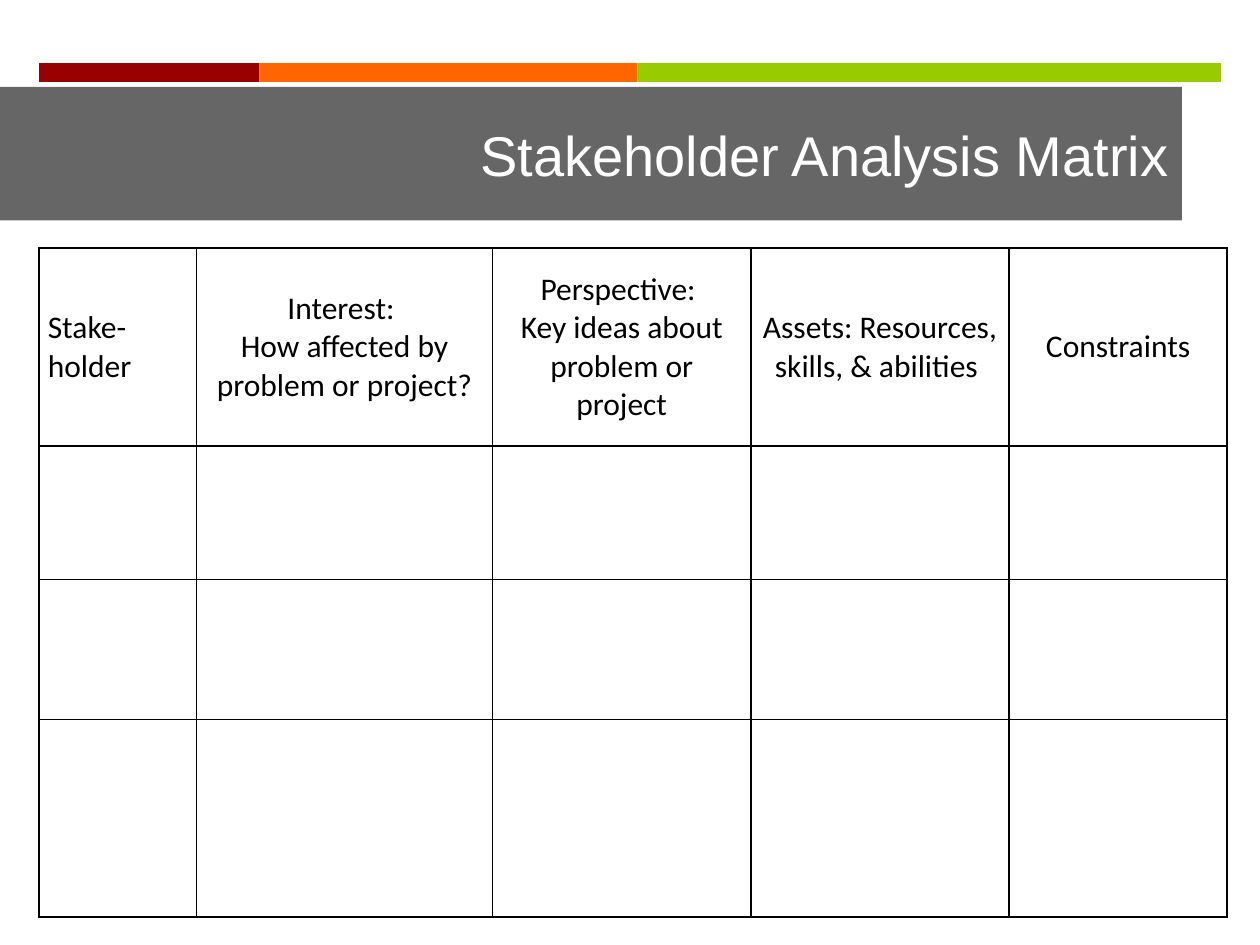
from dataclasses import dataclass
from itertools import accumulate

from lxml.etree import SubElement
from pptx import Presentation
from pptx.dml.color import RGBColor
from pptx.enum.shapes import MSO_SHAPE
from pptx.enum.text import MSO_ANCHOR, MSO_AUTO_SIZE, PP_ALIGN
from pptx.oxml.ns import qn
from pptx.util import Inches, Pt


@dataclass(frozen=True)
class Theme:
    stripes: tuple = ("990000", "FF6600", "99CC00")
    banner: str = "262626"
    banner_opacity: int = 70
    title_text: str = "FFFFFF"
    ink: str = "000000"
    title_font: str = "Arial"
    table_font: str = "Calibri"
    title_size: int = 32
    table_size: int = 18
    border_width: int = 1


THEME = Theme()
LEFT = 0.31
STRIPE_WIDTHS = (1.75, 3, 4.63)
COLUMN_WIDTHS = (1.25, 2.35, 2.05, 2.05, 1.73)
ROW_HEIGHTS = (1.57, 1.06, 1.11, 1.57)
HEADINGS = (
    "Stake-holder",
    "Interest: \nHow affected by problem or project?",
    "Perspective: \nKey ideas about problem or project",
    "Assets: Resources, skills, & abilities ",
    "Constraints",
)


def rgb(color):
    return RGBColor.from_string(color)


def style_font(font, name, size, color):
    font.name = name
    font.size = Pt(size)
    font.color.rgb = rgb(color)


def add_stripes(slide):
    starts = accumulate(STRIPE_WIDTHS, initial=LEFT)
    for left, width, color in zip(starts, STRIPE_WIDTHS, THEME.stripes):
        stripe = slide.shapes.add_shape(
            MSO_SHAPE.RECTANGLE, Inches(left), Inches(0.5), Inches(width), Inches(0.15))
        stripe.shadow.inherit = False
        stripe.fill.solid()
        stripe.fill.fore_color.rgb = rgb(color)
        stripe.line.fill.background()


def fill_banner(title):
    """Give the title a solid, partly transparent fill."""
    title.fill.solid()
    title.fill.fore_color.rgb = rgb(THEME.banner)
    color = next(title.fill._xPr.iter(qn("a:srgbClr")))
    SubElement(color, qn("a:alpha"), val=str(THEME.banner_opacity * 1000))


def set_title(slide, text):
    title = slide.shapes.title
    title.left, title.top = Inches(0), Inches(0.69)
    title.width, title.height = Inches(9.38), Inches(1.06)
    fill_banner(title)
    frame = title.text_frame
    frame.auto_size = MSO_AUTO_SIZE.NONE
    frame.vertical_anchor = MSO_ANCHOR.MIDDLE
    heading = frame.paragraphs[0]
    heading.text = text
    heading.alignment = PP_ALIGN.RIGHT
    style_font(heading.font, THEME.title_font, THEME.title_size, THEME.title_text)


def draw_borders(cell):
    properties = cell._tc.get_or_add_tcPr()
    for side in ("lnL", "lnR", "lnT", "lnB"):
        border = SubElement(properties, qn(f"a:{side}"), w=str(Pt(THEME.border_width)))
        SubElement(SubElement(border, qn("a:solidFill")), qn("a:srgbClr"), val=THEME.ink)


def format_cell(cell):
    draw_borders(cell)
    cell.fill.background()
    cell.margin_left = cell.margin_right = Inches(0.07)
    cell.margin_top = cell.margin_bottom = Inches(0.05)
    cell.vertical_anchor = MSO_ANCHOR.MIDDLE


def add_matrix(slide):
    matrix = slide.shapes.add_table(
        len(ROW_HEIGHTS), len(COLUMN_WIDTHS), Inches(LEFT), Inches(1.97),
        Inches(sum(COLUMN_WIDTHS)), Inches(sum(ROW_HEIGHTS))).table
    matrix.first_row = matrix.horz_banding = False
    for column, width in zip(matrix.columns, COLUMN_WIDTHS):
        column.width = Inches(width)
    for row, height in zip(matrix.rows, ROW_HEIGHTS):
        row.height = Inches(height)
    for cell in matrix.iter_cells():
        format_cell(cell)
    for index, text in enumerate(HEADINGS):
        heading = matrix.cell(0, index).text_frame.paragraphs[0]
        heading.text = text
        heading.alignment = PP_ALIGN.CENTER if index else PP_ALIGN.LEFT
        style_font(heading.font, THEME.table_font, THEME.table_size, THEME.ink)


def main():
    deck = Presentation()
    deck.slide_width, deck.slide_height = Inches(10), Inches(7.5)
    title_only = deck.slide_layouts[5]
    slide = deck.slides.add_slide(title_only)
    add_stripes(slide)
    set_title(slide, "Stakeholder Analysis Matrix")
    add_matrix(slide)
    deck.save("out.pptx")


if __name__ == "__main__":
    main()
